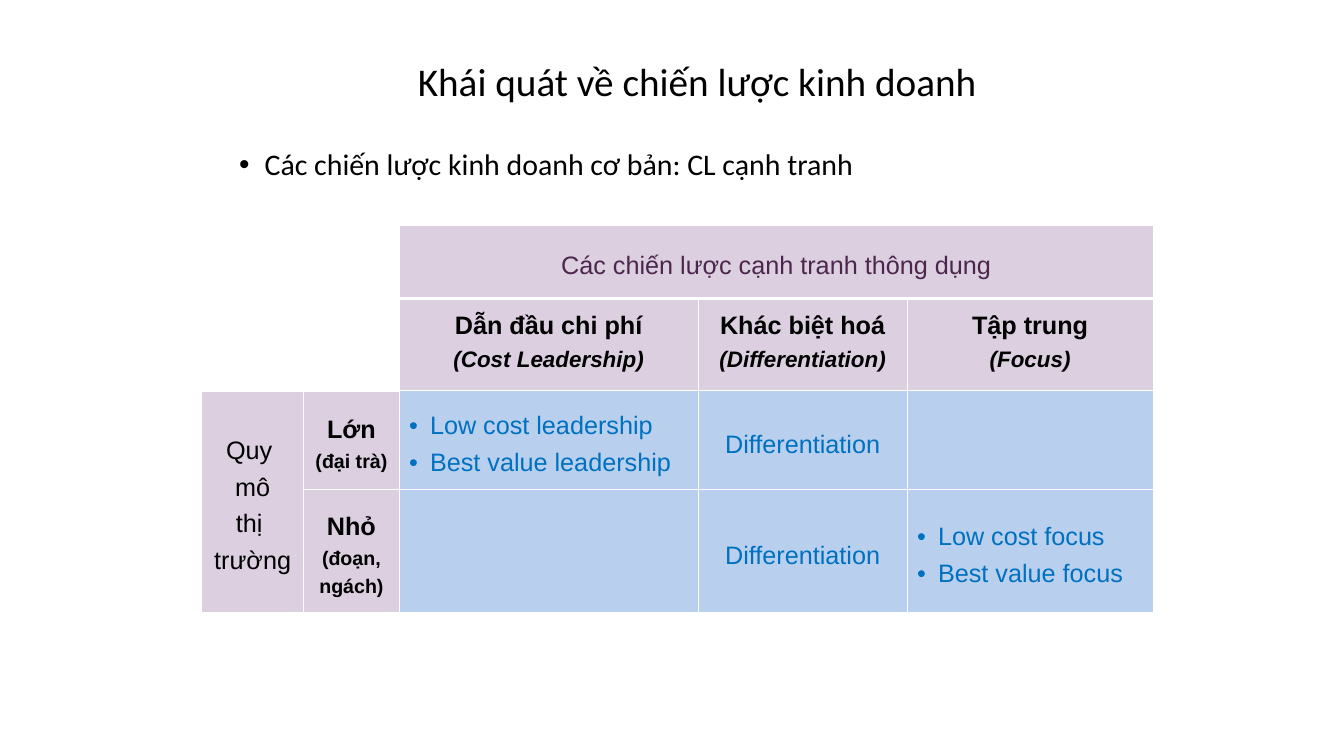
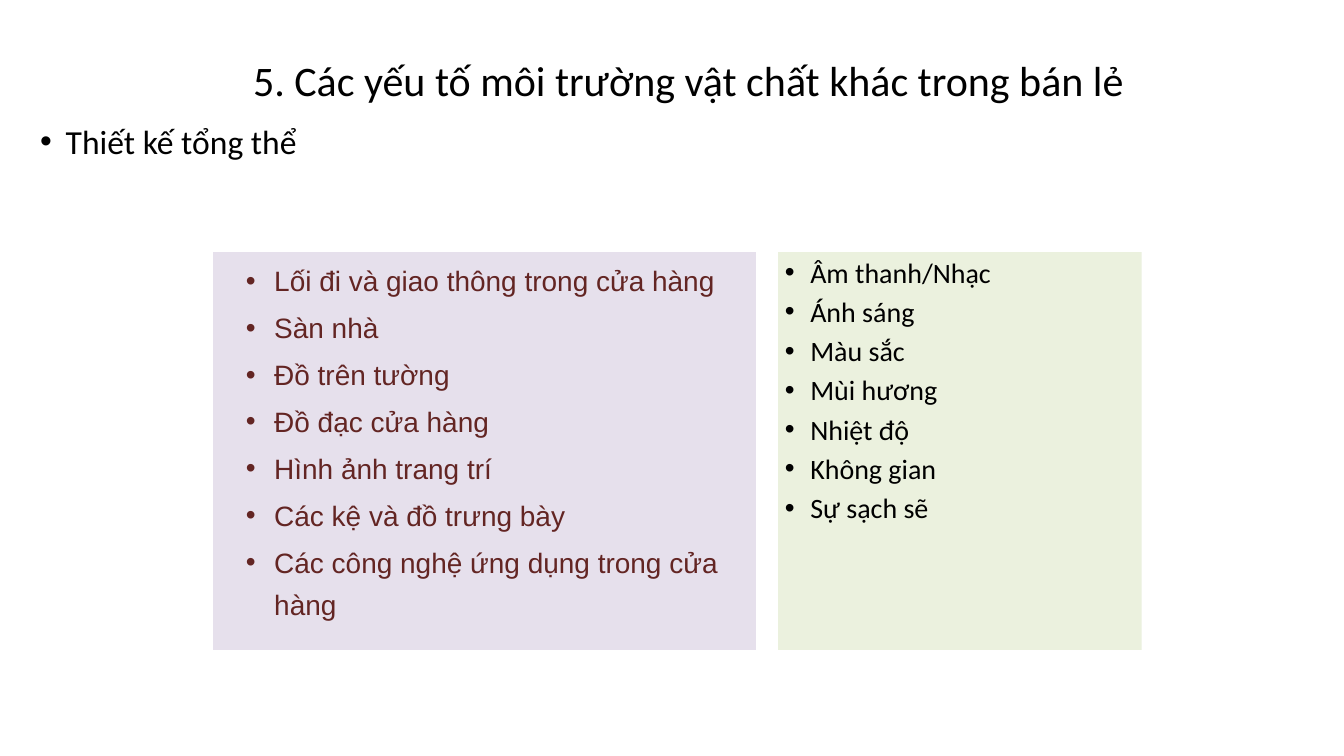
from lxml import etree
from pptx import Presentation
from pptx.dml.color import RGBColor
from pptx.enum.shapes import MSO_SHAPE
from pptx.enum.text import MSO_ANCHOR, PP_ALIGN
from pptx.oxml.ns import qn
from pptx.util import Inches, Pt

RECT = MSO_SHAPE.RECTANGLE
TOP, MIDDLE = MSO_ANCHOR.TOP, MSO_ANCHOR.MIDDLE
LEFT, CENTER = PP_ALIGN.LEFT, PP_ALIGN.CENTER

COLORS = {
    "black": "000000", "white": "FFFFFF", "plum": "4D264D", "mauve": "DBCFE0",
    "sky": "B8D0ED", "blue": "0070C0", "lilac": "E6E0EC", "sage": "EBF1DE",
    "maroon": "632523",
}

STRATEGY_TITLE = "Khái quát về chiến lược kinh doanh"
STRATEGY_POINT = "Các chiến lược kinh doanh cơ bản: CL cạnh tranh"
STORE_TITLE = "5. Các yếu tố môi trường vật chất khác trong bán lẻ"
STORE_POINT = "Thiết kế tổng thể"

DESIGN_ITEMS = [
    "Lối đi và giao thông trong cửa hàng", "Sàn nhà", "Đồ trên tường",
    "Đồ đạc cửa hàng", "Hình ảnh trang trí", "Các kệ và đồ trưng bày",
    "Các công nghệ ứng dụng trong cửa hàng",
]
AMBIENCE_ITEMS = [
    "Âm thanh/Nhạc", "Ánh sáng", "Màu sắc", "Mùi hương", "Nhiệt độ",
    "Không gian", "Sự sạch sẽ",
]

COL_WIDTHS = [1.52, 1.42, 4.45, 3.11, 3.66]
ROW_HEIGHTS = [1.09, 1.37, 1.48, 1.83]
MERGES = [((0, 0), (1, 1)), ((0, 2), (0, 4)), ((2, 0), (3, 0))]
GRID = {
    (0, 2): ("banner", ["Các chiến lược cạnh tranh thông dụng"]),
    (1, 2): ("strategy", ["Dẫn đầu chi phí", "(Cost Leadership)"]),
    (1, 3): ("strategy", ["Khác biệt hoá", "(Differentiation)"]),
    (1, 4): ("strategy", ["Tập trung", "(Focus)"]),
    (2, 0): ("axis", ["Quy ", "mô", "thị ", "trường"]),
    (2, 1): ("market", ["Lớn", "(đại trà)"]),
    (2, 2): ("choices", ["Low cost leadership", "Best value leadership"]),
    (2, 3): ("choice", ["Differentiation"]),
    (2, 4): ("choice", []),
    (3, 1): ("market", ["Nhỏ", "(đoạn, ngách)"]),
    (3, 2): ("choice", []),
    (3, 3): ("choice", ["Differentiation"]),
    (3, 4): ("choices", ["Low cost focus", "Best value focus"]),
}
CELL_STYLES = {
    "banner": ("mauve", dict(color="plum")),
    "strategy": ("mauve", dict(bold=True, anchor=TOP, rest=dict(size=24, italic=True))),
    "axis": ("mauve", {}),
    "market": ("mauve", dict(bold=True, rest=dict(size=21))),
    "choice": ("sky", dict(color="blue")),
    "choices": ("sky", dict(color="blue", align=LEFT, indent=0.31)),
}


def rgb(name):
    return RGBColor.from_string(COLORS[name])


def fill_with(target, name):
    target.fill.solid()
    target.fill.fore_color.rgb = rgb(name)


def write(tf, texts, font="Calibri", size=30, color="black", bold=False,
          align=LEFT, indent=0, line=1.0, before=0, rest=None):
    for i, text in enumerate(texts):
        p = tf.paragraphs[0] if i == 0 else tf.add_paragraph()
        p.alignment = align
        p.line_spacing = line
        p.space_before = Pt(before)
        if indent:
            pPr = p._p.get_or_add_pPr()
            pPr.set("marL", str(Inches(indent)))
            pPr.set("indent", str(-Inches(indent)))
            etree.SubElement(pPr, qn("a:buFont")).set("typeface", "Arial")
            etree.SubElement(pPr, qn("a:buChar")).set("char", "•")
        r = p.add_run()
        r.text = text
        look = dict(size=size, italic=False)
        if i and rest:
            look.update(rest)
        r.font.name = font
        r.font.size = Pt(look["size"])
        r.font.italic = look["italic"]
        r.font.bold = bold
        r.font.color.rgb = rgb(color)


def add_text(slide, box, texts, fill=None, anchor=TOP, inset=0.1, **fmt):
    box = [Inches(v) for v in box]
    if fill:
        sp = slide.shapes.add_shape(RECT, *box)
        sp.shadow.inherit = False
        fill_with(sp, fill)
        sp.line.fill.background()
    else:
        sp = slide.shapes.add_textbox(*box)
    tf = sp.text_frame
    tf.word_wrap = True
    tf.vertical_anchor = anchor
    tf.margin_left = Inches(inset)
    write(tf, texts, **fmt)
    return sp


def add_title(slide, box, text, size, fill=None):
    return add_text(slide, box, [text], fill=fill, anchor=MIDDLE, size=size, align=CENTER)


def add_bullets(slide, box, texts, size, fill=None):
    add_text(slide, box, texts, fill=fill, size=size, indent=0.38, before=size * 0.2)


def set_borders(cell, bottom):
    tcPr = cell._tc.get_or_add_tcPr()
    for side, width in (("L", 1), ("R", 1), ("T", 1), ("B", bottom)):
        ln = etree.SubElement(tcPr, qn("a:ln" + side), w=str(Pt(width)))
        solid = etree.SubElement(ln, qn("a:solidFill"))
        etree.SubElement(solid, qn("a:srgbClr"), val=COLORS["white"])


def add_strategy_table(slide, left, top):
    table = slide.shapes.add_table(
        len(ROW_HEIGHTS), len(COL_WIDTHS), Inches(left), Inches(top),
        Inches(sum(COL_WIDTHS)), Inches(sum(ROW_HEIGHTS))).table
    table.first_row = table.horz_banding = False
    for col, width in zip(table.columns, COL_WIDTHS):
        col.width = Inches(width)
    for row, height in zip(table.rows, ROW_HEIGHTS):
        row.height = Inches(height)
    for first, last in MERGES:
        table.cell(*first).merge(table.cell(*last))
    for r in range(len(ROW_HEIGHTS)):
        for c in range(len(COL_WIDTHS)):
            cell = table.cell(r, c)
            set_borders(cell, 3 if r == 0 else 1)
            if (r, c) not in GRID:
                cell.fill.background()
                continue
            style, texts = GRID[r, c]
            fill, fmt = CELL_STYLES[style]
            fill_with(cell, fill)
            fmt = dict(dict(font="Arial", size=27, align=CENTER, line=1.3, anchor=MIDDLE), **fmt)
            cell.vertical_anchor = fmt.pop("anchor")
            cell.margin_left = cell.margin_right = Inches(0.15)
            cell.margin_top = cell.margin_bottom = Inches(0.07)
            write(cell.text_frame, texts, **fmt)


def build_strategy(slide):
    add_title(slide, (3.5, 0.28, 13.75, 1.85), STRATEGY_TITLE, 42)
    add_bullets(slide, (3.46, 2.12, 13.75, 7.72), [STRATEGY_POINT], 32)
    add_strategy_table(slide, 3, 3.35)


def build_store(slide):
    title = add_title(slide, (3.5, 0.49, 13.49, 1.39), STORE_TITLE, 45, "white")
    white = title._element.spPr.find(qn("a:solidFill"))[0]
    etree.SubElement(white, qn("a:alpha"), val="83000")
    add_bullets(slide, (0.5, 1.75, 9, 4.95), [STORE_POINT], 36)
    top, height = 3.75, 5.92
    add_bullets(slide, (11.58, top, 5.41, height), AMBIENCE_ITEMS, 30, "sage")
    add_text(slide, (3.17, top, 8.08, height), DESIGN_ITEMS, fill="lilac", inset=0.49,
             font="Arial", color="maroon", indent=0.42, line=1.25, before=5.3)


def main():
    prs = Presentation()
    prs.slide_width, prs.slide_height = Inches(20), Inches(11.25)
    for build in (build_strategy, build_store):
        build(prs.slides.add_slide(prs.slide_layouts[6]))
    prs.save("out.pptx")


if __name__ == "__main__":
    main()
